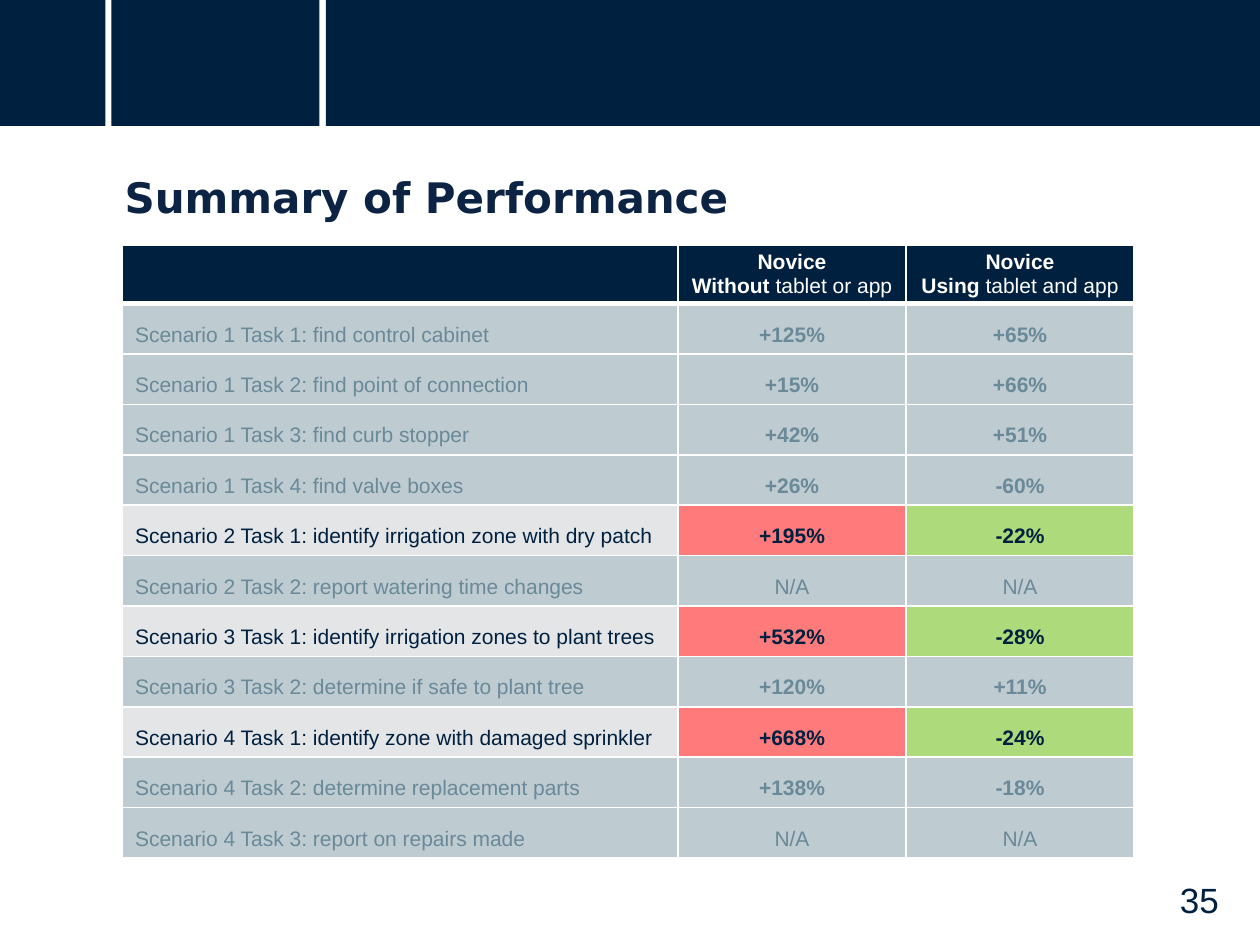
from dataclasses import dataclass

from lxml import etree
from pptx import Presentation
from pptx.dml.color import RGBColor
from pptx.enum import shapes, text
from pptx.oxml import ns
from pptx.util import Pt

NAVY = RGBColor(0x00, 0x20, 0x40)
TITLE_NAVY = RGBColor(0x0C, 0x23, 0x44)
WHITE = RGBColor(0xFF, 0xFF, 0xFF)
MUTED_TEXT = RGBColor(0x6A, 0x89, 0x99)
MUTED_FILL = RGBColor(0xBE, 0xCB, 0xD0)
GREY = RGBColor(0xCB, 0xCC, 0xCE)
RED = RGBColor(0xFF, 0x50, 0x50)
GREEN = RGBColor(0x92, 0xD0, 0x50)

BODY_FONT = "Arial"
HEADER_HEIGHT = 33.5
ROW_HEIGHT = 28.8
COLUMN_WIDTHS = (317.5, 130.3, 130.3)


@dataclass
class Band:
    left: float
    width: float


@dataclass
class Task:
    name: str
    without_app: str
    using_app: str
    highlighted: bool = False


BANDS = (Band(0, 60.2), Band(63.6, 119), Band(186.2, 533.8))

# Each heading has a bold line, then a bold word and a plain remainder
HEADINGS = (("Without ", "tablet or app"), ("Using ", "tablet and app"))

TASKS = (
    Task("Scenario 1 Task 1: find control cabinet", "+125%", "+65%"),
    Task("Scenario 1 Task 2: find point of connection", "+15%", "+66%"),
    Task("Scenario 1 Task 3: find curb stopper", "+42%", "+51%"),
    Task("Scenario 1 Task 4: find valve boxes", "+26%", "-60%"),
    Task("Scenario 2 Task 1: identify irrigation zone with dry patch", "+195%", "-22%", True),
    Task("Scenario 2 Task 2: report watering time changes", "N/A", "N/A"),
    Task("Scenario 3 Task 1: identify irrigation zones to plant trees", "+532%", "-28%", True),
    Task("Scenario 3 Task 2: determine if safe to plant tree", "+120%", "+11%"),
    Task("Scenario 4 Task 1: identify zone with damaged sprinkler", "+668%", "-24%", True),
    Task("Scenario 4 Task 2: determine replacement parts", "+138%", "-18%"),
    Task("Scenario 4 Task 3: report on repairs made", "N/A", "N/A"),
)


def add_run(paragraph, words: str, size: float, color: RGBColor,
            bold: bool = False, font: str = BODY_FONT) -> None:
    run = paragraph.add_run()
    run.text = words
    run.font.name = font
    run.font.size = Pt(size)
    run.font.bold = bold
    run.font.color.rgb = color


def add_band(slide, band: Band) -> None:
    shape = slide.shapes.add_shape(shapes.MSO_SHAPE.RECTANGLE,
                                   Pt(band.left), 0, Pt(band.width), Pt(72))
    shape.shadow.inherit = False
    shape.fill.solid()
    shape.fill.fore_color.rgb = NAVY
    shape.line.fill.background()


def format_cell(cell, fill: RGBColor, opacity: int = 100, top: float = 1,
                bottom: float = 1, side_margin: float = 7.2,
                end_margin: float = 4) -> None:
    cell.vertical_anchor = text.MSO_ANCHOR.MIDDLE
    cell.margin_left = cell.margin_right = Pt(side_margin)
    cell.margin_top = cell.margin_bottom = Pt(end_margin)
    # Borders come before the fill in the cell properties
    properties = cell._tc.get_or_add_tcPr()
    for tag, width in (("a:lnL", 1), ("a:lnR", 1), ("a:lnT", top), ("a:lnB", bottom)):
        line = etree.SubElement(properties, ns.qn(tag), w=str(Pt(width)))
        solid = etree.SubElement(line, ns.qn("a:solidFill"))
        etree.SubElement(solid, ns.qn("a:srgbClr"), val=str(WHITE))
    cell.fill.solid()
    cell.fill.fore_color.rgb = fill
    if opacity < 100:
        color = properties.find(ns.qn("a:solidFill")).find(ns.qn("a:srgbClr"))
        etree.SubElement(color, ns.qn("a:alpha"), val=str(opacity * 1000))


def fill_header(table) -> None:
    for column in range(len(COLUMN_WIDTHS)):
        format_cell(table.cell(0, column), NAVY, bottom=3, side_margin=4, end_margin=3)
    for column, (strong, plain) in enumerate(HEADINGS, start=1):
        frame = table.cell(0, column).text_frame
        first, second = frame.paragraphs[0], frame.add_paragraph()
        first.alignment = second.alignment = text.PP_ALIGN.CENTER
        add_run(first, "Novice", 12, WHITE, bold=True)
        add_run(second, strong, 12, WHITE, bold=True)
        add_run(second, plain, 12, WHITE)


def fill_task(table, row: int, task: Task) -> None:
    if task.highlighted:
        color, fills = NAVY, ((GREY, 50), (RED, 75), (GREEN, 75))
    else:
        color, fills = MUTED_TEXT, ((MUTED_FILL, 100),) * 3
    values = (task.name, task.without_app, task.using_app)
    for column, (value, (fill, opacity)) in enumerate(zip(values, fills)):
        cell = table.cell(row, column)
        format_cell(cell, fill, opacity, top=3 if row == 1 else 1)
        paragraph = cell.text_frame.paragraphs[0]
        paragraph.line_spacing = 1.5
        paragraph.alignment = text.PP_ALIGN.CENTER if column else text.PP_ALIGN.LEFT
        add_run(paragraph, value, 12, color, bold=column > 0 and value != "N/A")


def add_results_table(slide) -> None:
    frame = slide.shapes.add_table(
        len(TASKS) + 1, len(COLUMN_WIDTHS), Pt(70), Pt(140),
        Pt(sum(COLUMN_WIDTHS)), Pt(HEADER_HEIGHT + ROW_HEIGHT * len(TASKS)))
    table = frame.table
    table.horz_banding = False
    for column, width in zip(table.columns, COLUMN_WIDTHS):
        column.width = Pt(width)
    for index, row in enumerate(table.rows):
        row.height = Pt(ROW_HEIGHT if index else HEADER_HEIGHT)
    fill_header(table)
    for index, task in enumerate(TASKS, start=1):
        fill_task(table, index, task)


def format_title(slide) -> None:
    title = slide.shapes.title
    title.left, title.top, title.width, title.height = Pt(64), Pt(94.3), Pt(595.5), Pt(42.5)
    frame = title.text_frame
    frame.auto_size = text.MSO_AUTO_SIZE.NONE
    frame.vertical_anchor = text.MSO_ANCHOR.TOP
    paragraph = frame.paragraphs[0]
    paragraph.alignment = text.PP_ALIGN.LEFT
    add_run(paragraph, "Summary of Performance", 24, TITLE_NAVY, True, "DejaVu Sans")


def add_page_number(slide) -> None:
    box = slide.shapes.add_textbox(Pt(666), Pt(498.2), Pt(38.9), Pt(31.7))
    box.text_frame.word_wrap = False
    paragraph = box.text_frame.paragraphs[0]
    paragraph.alignment = text.PP_ALIGN.CENTER
    add_run(paragraph, "35", 20, NAVY)


def main() -> None:
    presentation = Presentation()
    presentation.slide_width, presentation.slide_height = Pt(720), Pt(540)
    slide = presentation.slides.add_slide(presentation.slide_layouts[5])

    # Top banner
    for band in BANDS:
        add_band(slide, band)

    # Title, results and page number
    format_title(slide)
    add_results_table(slide)
    add_page_number(slide)
    presentation.save("out.pptx")


if __name__ == "__main__":
    main()
